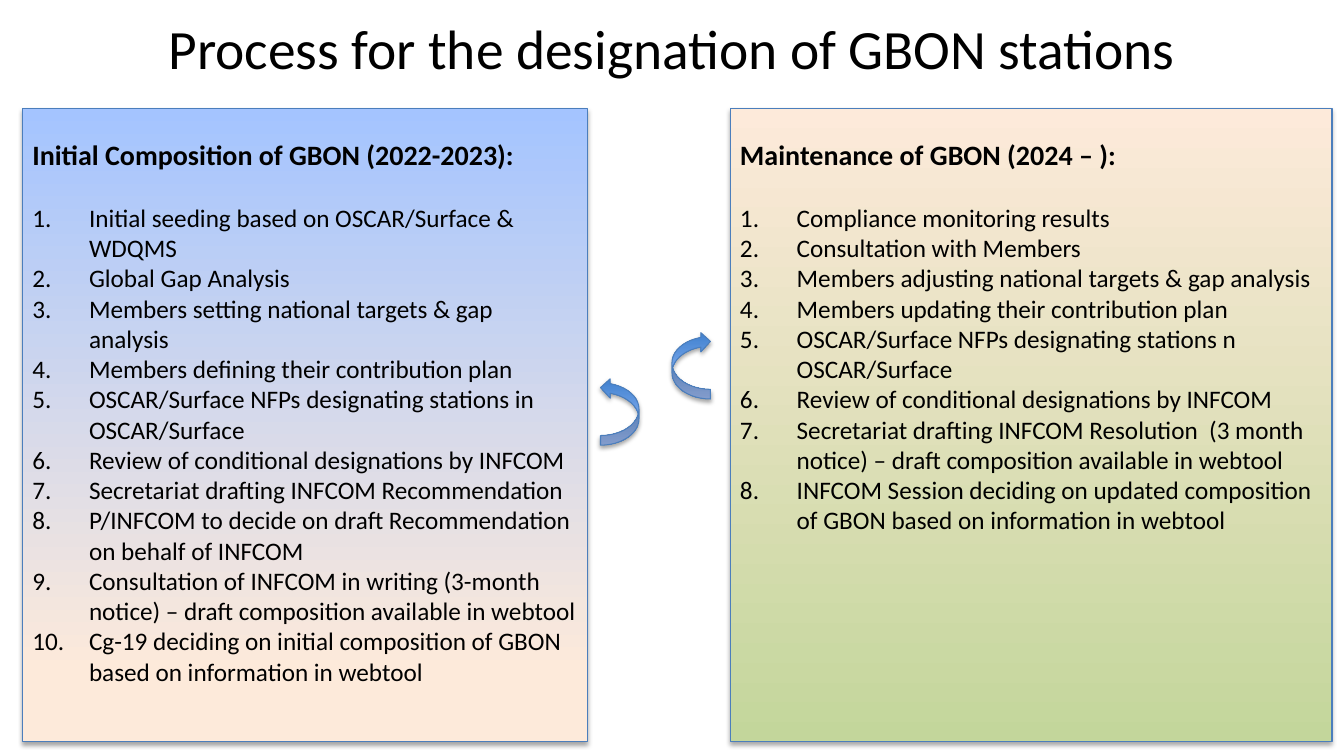
from lxml import etree
from pptx import Presentation
from pptx.dml.color import RGBColor
from pptx.enum.shapes import MSO_SHAPE
from pptx.enum.text import MSO_ANCHOR, PP_ALIGN
from pptx.oxml import parse_xml
from pptx.oxml.ns import nsdecls, qn
from pptx.util import Pt

RECT, ARROW = MSO_SHAPE.RECTANGLE, MSO_SHAPE.CURVED_RIGHT_ARROW
TOP, MIDDLE = MSO_ANCHOR.TOP, MSO_ANCHOR.MIDDLE
LEFT, CENTER = PP_ALIGN.LEFT, PP_ALIGN.CENTER

BLACK = RGBColor(0x00, 0x00, 0x00)
OUTLINE = RGBColor(0x4B, 0x7E, 0xBC)
CREAM = RGBColor(0xFD, 0xEA, 0xDA)
GREEN = RGBColor(0xC3, 0xD6, 0x9B)
LIGHT_BLUE = RGBColor(0xA4, 0xC4, 0xFF)
MID_BLUE = RGBColor(0x3F, 0x80, 0xCE)
FONT = "Calibri"

# Content
TITLE = "Process for the designation of GBON stations"
INITIAL_STEPS = [
    "Initial seeding based on OSCAR/Surface & WDQMS",
    "Global Gap Analysis",
    "Members setting national targets & gap analysis",
    "Members defining their contribution plan",
    "OSCAR/Surface NFPs designating stations in OSCAR/Surface",
    "Review of conditional designations by INFCOM",
    "Secretariat drafting INFCOM Recommendation",
    "P/INFCOM to decide on draft Recommendation on behalf of INFCOM",
    "Consultation of INFCOM in writing (3-month notice) – draft composition available in webtool",
    "Cg-19 deciding on initial composition of GBON based on information in webtool",
]
MAINTENANCE_STEPS = [
    "Compliance monitoring results",
    "Consultation with Members",
    "Members adjusting national targets & gap analysis",
    "Members updating their contribution plan",
    "OSCAR/Surface NFPs designating stations n OSCAR/Surface",
    "Review of conditional designations by INFCOM",
    "Secretariat drafting INFCOM Resolution  (3 month notice) – draft composition available in webtool",
    "INFCOM Session deciding on updated composition of GBON based on information in webtool",
]
# Heading, steps, left, width, gradient stops from bottom to top
PANELS = [
    ("Maintenance of GBON (2024 – ):", MAINTENANCE_STEPS, 521.5, 430,
     [(0, GREEN), (1, CREAM)]),
    ("Initial Composition of GBON (2022-2023):", INITIAL_STEPS, 16, 403.5,
     [(0.11, CREAM), (1, LIGHT_BLUE)]),
]
PANEL_TOP, PANEL_HEIGHT = 77.5, 452.5
# Left, top, flips
ARROWS = [(480, 237, ["flipV"]), (429, 270, ["flipH", "flipV"])]
ARROW_WIDTH, ARROW_HEIGHT = 27.5, 48
STEP_INDENT = Pt(40.5)


def add_shaded_shape(s, kind, left, top, width, height, stops):
    sp = s.shapes.add_shape(kind, Pt(left), Pt(top), Pt(width), Pt(height))
    sp.fill.gradient()
    sp.fill.gradient_angle = 90
    for stop, (position, color) in zip(sp.fill.gradient_stops, stops):
        stop.position = position
        stop.color.rgb = color
    sp.line.color.rgb = OUTLINE
    sp.line.width = Pt(0.75)
    # Soft shadow straight below
    sp.shadow.inherit = False
    effects = sp._element.spPr.find(qn("a:effectLst"))
    effects.append(parse_xml(
        f'<a:outerShdw {nsdecls("a")} blurRad="{Pt(3.1)}" dist="{Pt(1.8)}" '
        'dir="5400000" rotWithShape="0"><a:srgbClr val="000000">'
        '<a:alpha val="35000"/></a:srgbClr></a:outerShdw>'))
    return sp


def format_text(p, size, bold=False, align=LEFT):
    p.alignment = align
    for r in p.runs:
        r.font.name = FONT
        r.font.size = Pt(size)
        r.font.bold = bold
        r.font.color.rgb = BLACK


def number_step(p):
    pPr = p._p.get_or_add_pPr()
    pPr.set("marL", str(STEP_INDENT))
    pPr.set("indent", str(-STEP_INDENT))
    etree.SubElement(pPr, qn("a:buFont"), typeface="+mj-lt")
    etree.SubElement(pPr, qn("a:buAutoNum"), type="arabicPeriod")


prs = Presentation()
prs.slide_width, prs.slide_height = Pt(960), Pt(540)
s = prs.slides.add_slide(prs.slide_layouts[5])

# Title
title = s.shapes.title
title.left, title.top, title.width, title.height = Pt(48), Pt(10), Pt(864), Pt(48)
title.text_frame.text = TITLE
title.text_frame.vertical_anchor = MIDDLE
format_text(title.text_frame.paragraphs[0], 39.6, align=CENTER)

# Panels with numbered steps
for heading, steps, left, width, stops in PANELS:
    sp = add_shaded_shape(s, RECT, left, PANEL_TOP, width, PANEL_HEIGHT, stops)
    tf = sp.text_frame
    tf.word_wrap = True
    tf.vertical_anchor = TOP
    tf.margin_top = Pt(21)
    tf.text = heading
    format_text(tf.paragraphs[0], 20, bold=True)
    for i, step in enumerate(steps):
        p = tf.add_paragraph()
        p.text = step
        if i == 0:
            p.space_before = Pt(22)
        number_step(p)
        format_text(p, 18)

# Curved arrows between the panels
for left, top, flips in ARROWS:
    sp = add_shaded_shape(s, ARROW, left, top, ARROW_WIDTH, ARROW_HEIGHT,
                          [(0, MID_BLUE), (1, LIGHT_BLUE)])
    for flip in flips:
        sp._element.spPr.xfrm.set(flip, "1")

prs.save("out.pptx")
